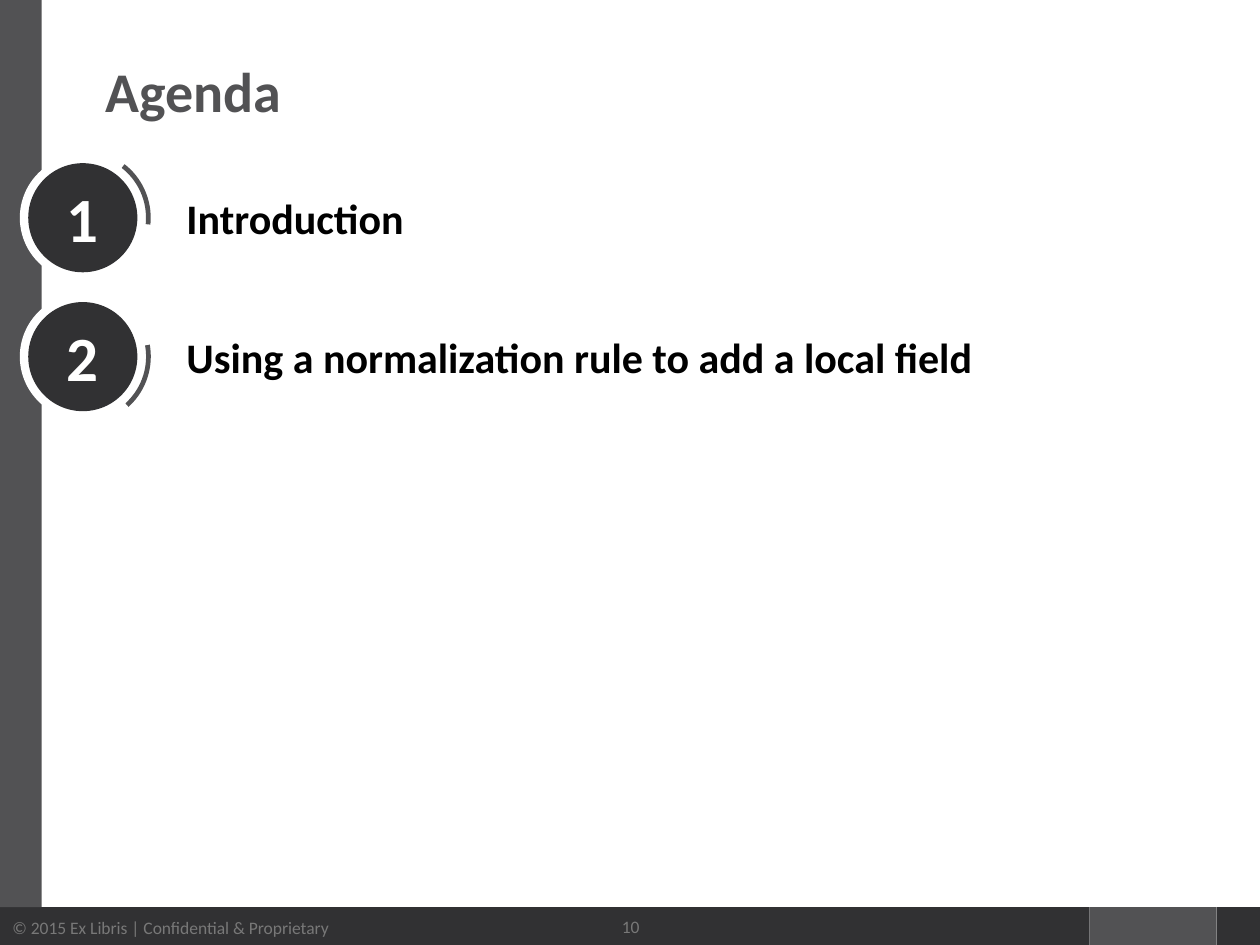
import dataclasses
import typing

import pptx
import pptx.dml.color
import pptx.enum.shapes
import pptx.enum.text
import pptx.util

Cm = pptx.util.Cm
Pt = pptx.util.Pt
RGB = pptx.dml.color.RGBColor
Kind = pptx.enum.shapes.MSO_SHAPE
Align = pptx.enum.text.PP_ALIGN
Anchor = pptx.enum.text.MSO_ANCHOR


@dataclasses.dataclass(frozen=True)
class Theme:
    font: str = "Calibri"
    dark: RGB = RGB(0x31, 0x31, 0x33)
    grey: RGB = RGB(0x52, 0x52, 0x54)
    faint: RGB = RGB(0x78, 0x78, 0x78)
    white: RGB = RGB(0xFF, 0xFF, 0xFF)
    black: RGB = RGB(0, 0, 0)
    title: int = 32
    badge: int = 36
    label: int = 24
    foot: int = 10


THEME = Theme()


class Box(typing.NamedTuple):
    """Left, top, width and height in centimetres."""
    left: float
    top: float
    width: float
    height: float

    def place(self) -> tuple:
        return tuple(Cm(side) for side in self)


class Band(typing.NamedTuple):
    box: Box
    fill: RGB


class Topic(typing.NamedTuple):
    text: str
    width: float
    turn: float


FOOT_TOP, FOOT_HIGH = 18.29, 0.81
FOOT = Band(Box(0, FOOT_TOP, 21.96, FOOT_HIGH), THEME.dark)
BANDS = [
    Band(Box(21.96, FOOT_TOP, 2.57, FOOT_HIGH), THEME.grey),
    Band(Box(24.53, FOOT_TOP, 0.89, FOOT_HIGH), THEME.dark),
    Band(Box(0, 0, 0.84, FOOT_TOP), THEME.grey),
]
TOPICS = [
    Topic("Introduction", 15.42, 5.1),
    Topic("Using a normalization rule to add a local field", 17.5, 47),
]
MID_X, FIRST_Y, STEP = 1.67, 4.39, 2.8
HALO, RING, DISC = 2.54, 2.74, 2.2
LABEL_LEFT, LABEL_HIGH = 3.63, 1.78


def add_shape(shapes, kind, box: Box, fill: RGB):
    shape = shapes.add_shape(kind, *box.place())
    shape.shadow.inherit = False
    shape.fill.solid()
    shape.fill.fore_color.rgb = fill
    shape.line.fill.background()
    return shape


def write(shape, text: str, size: int, color: RGB, bold: bool = False,
          align=Align.LEFT, anchor=Anchor.MIDDLE) -> None:
    frame = shape.text_frame
    frame.word_wrap = True
    frame.vertical_anchor = anchor
    frame.text = text
    para = frame.paragraphs[0]
    para.alignment = align
    para.font.name = THEME.font
    para.font.size = Pt(size)
    para.font.bold = bold
    para.font.color.rgb = color


def add_text(slide, box: Box, text: str, size: int, color: RGB, **style):
    shape = slide.shapes.add_textbox(*box.place())
    write(shape, text, size, color, **style)
    return shape


def add_round(shapes, kind, mid_y: float, size: float, fill: RGB):
    """Add a shape of equal sides, centred on the badge column."""
    box = Box(MID_X - size / 2, mid_y - size / 2, size, size)
    return add_shape(shapes, kind, box, fill)


def add_badge(slide, number: int, mid_y: float, turn: float) -> None:
    shapes = slide.shapes.add_group_shape().shapes
    add_round(shapes, Kind.OVAL, mid_y, HALO, THEME.white)
    ring = add_round(shapes, Kind.BLOCK_ARC, mid_y, RING, THEME.grey)
    for index, value in enumerate((181.725, 0.424, 0.035)):
        ring.adjustments[index] = value
    ring.rotation = turn
    disc = add_round(shapes, Kind.OVAL, mid_y, DISC, THEME.dark)
    write(disc, str(number), THEME.badge, THEME.white, bold=True,
          align=Align.CENTER)


def add_topic(slide, number: int, topic: Topic) -> None:
    mid_y = FIRST_Y + (number - 1) * STEP
    add_badge(slide, number, mid_y, topic.turn)
    box = Box(LABEL_LEFT, mid_y - LABEL_HIGH / 2, topic.width, LABEL_HIGH)
    label = add_text(slide, box, topic.text, THEME.label, THEME.black,
                     bold=True)
    frame = label.text_frame
    frame.margin_left = frame.margin_right = Cm(0.13)
    frame.margin_top = frame.margin_bottom = Cm(0.13)


def add_title(slide, text: str) -> None:
    title = slide.shapes.title
    title.left, title.top, title.width, title.height = Box(
        1.88, 1.17, 21.59, 3.02).place()
    write(title, text, THEME.title, THEME.grey, bold=True, anchor=Anchor.TOP)
    title.text_frame.paragraphs[0].line_spacing = 0.9


def add_frame(slide) -> None:
    """Add the footer bar, the side bar and the page number."""
    foot = add_shape(slide.shapes, Kind.RECTANGLE, *FOOT)
    write(foot, "© 2015 Ex Libris | Confidential & Proprietary",
          THEME.foot, THEME.faint)
    for band in BANDS:
        add_shape(slide.shapes, Kind.RECTANGLE, *band)
    add_text(slide, Box(11.23, 18.19, 2.97, 0.99), "10", THEME.foot,
             THEME.faint, align=Align.CENTER)


def main() -> None:
    deck = pptx.Presentation()
    deck.slide_width, deck.slide_height = Cm(25.4), Cm(19.05)
    slide = deck.slides.add_slide(deck.slide_layouts[5])
    add_frame(slide)
    add_title(slide, "Agenda")
    for number, topic in enumerate(TOPICS, 1):
        add_topic(slide, number, topic)
    deck.save("out.pptx")


if __name__ == "__main__":
    main()
